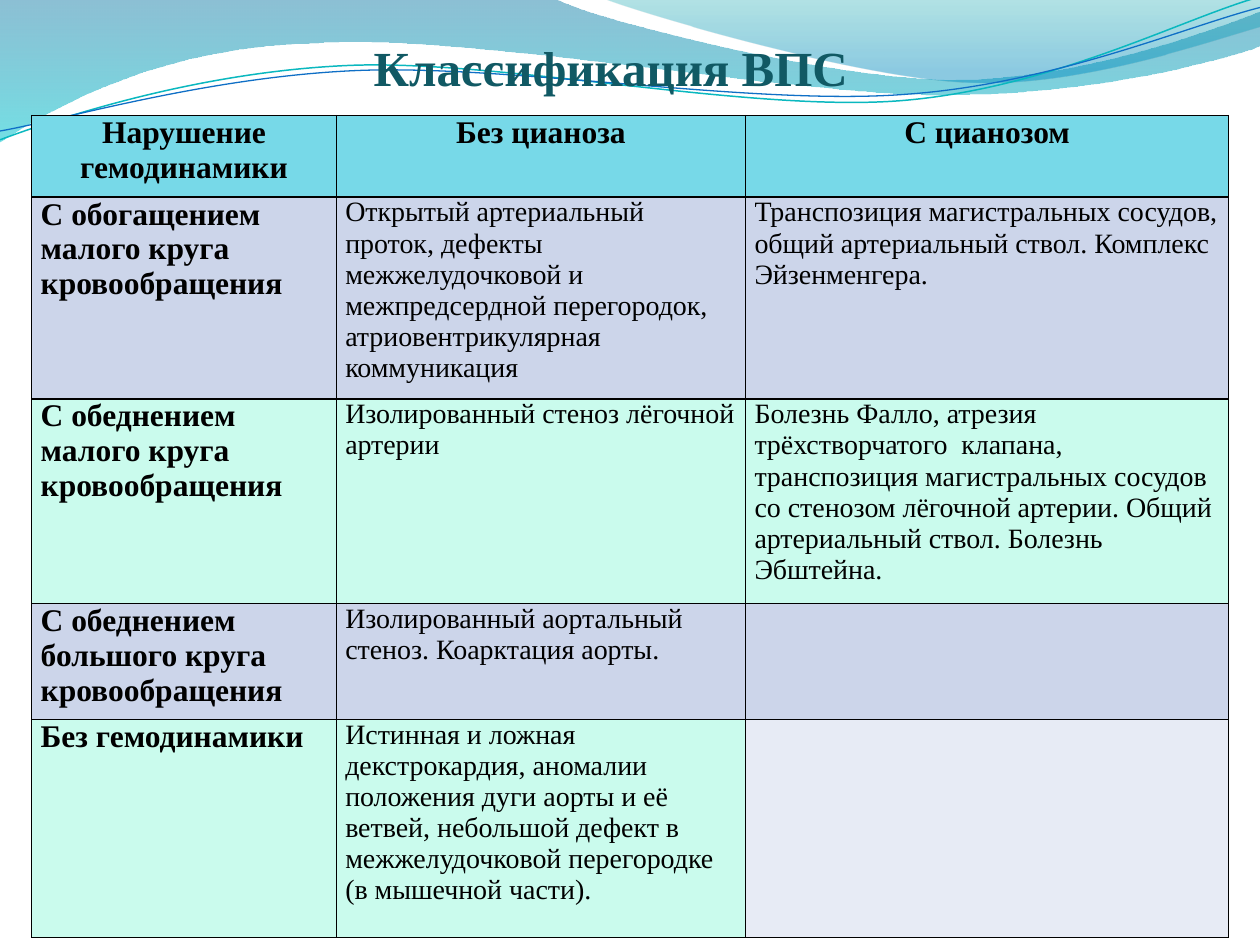
from dataclasses import dataclass
from math import cos, radians, sin

from lxml.etree import SubElement
from pptx import Presentation
from pptx.dml.color import RGBColor as Color
from pptx.enum.text import PP_ALIGN as Align
from pptx.oxml.ns import qn
from pptx.util import Cm, Pt


@dataclass(frozen=True)
class Theme:
    """Colours, fonts and type sizes of the slide."""
    font: str = "Times New Roman"
    spacer_font: str = "Cambria"
    title_size: int = 28
    label_size: int = 18
    body_size: int = 16
    title: str = "115964"
    ink: str = "000000"
    header: str = "77D9E8"
    blue: str = "CCD5EA"
    mint: str = "CAFBED"
    pale: str = "E7EBF5"
    teal_line: str = "0AB8BF"
    blue_line: str = "0F6FC6"
    left_wave: tuple = ((0, "0074A1", 45), (100, "00C6CF", 55))
    right_wave: tuple = ((0, "00A1A9", 30), (80, "008BBF", 45))


THEME = Theme()
UNITS_PER_INCH = 1000
LINE_TILT = -2.7

LEFT_WAVE = [
    (0, 0), (4.4, -0.01),
    (4.76, 0.17, 6.64, 0.63, 7.58, 0.63), (8.53, 0.63, 9.58, 0.26, 10, 0.09),
    (10.01, 0.36),
    (9.83, 0.44, 8.7, 0.76, 7.46, 0.75), (6.22, 0.75, 3.82, 0.28, 2.57, 0.34),
    (1.29, 0.36, 0.46, 0.83, -0.01, 1.13),
]
RIGHT_WAVE = [
    (4.79, -0.01),
    (5.09, 0.11, 6.82, 0.62, 7.69, 0.65), (8.56, 0.69, 9.61, 0.32, 10, 0.21),
    (10, 0),
]
TEAL_CURVE = [
    (0, 1.11), (0.48, 0.93, 1.58, 0.57, 2.77, 0.52),
    (3.95, 0.47, 5.93, 0.89, 7.13, 0.8), (8.33, 0.71, 9.38, 0.15, 9.98, -0.02),
]
BLUE_CURVE = [
    (0, 1.04), (0.47, 0.96, 1.64, 0.61, 2.83, 0.56),
    (4.03, 0.51, 5.97, 0.84, 7.17, 0.75), (8.36, 0.67, 9.41, 0.21, 10, 0.06),
]

COLUMNS = (6.14, 8.25, 9.74)
ROWS = (1.64, 4.07, 4.13, 2.33, 4.4)
CONTENT = [
    ("Нарушение гемодинамики", "Без цианоза", "С цианозом"),
    ("С обогащением малого круга кровообращения",
     "Открытый артериальный проток, дефекты межжелудочковой и межпредсердной "
     "перегородок, атриовентрикулярная коммуникация",
     "Транспозиция магистральных сосудов, общий артериальный ствол. "
     "Комплекс Эйзенменгера."),
    ("С обеднением малого круга кровообращения",
     "Изолированный стеноз лёгочной артерии",
     "Болезнь Фалло, атрезия трёхстворчатого  клапана, транспозиция "
     "магистральных сосудов со стенозом лёгочной артерии. Общий артериальный "
     "ствол. Болезнь Эбштейна."),
    ("С обеднением большого круга кровообращения",
     "Изолированный аортальный стеноз. Коарктация аорты.", ""),
    ("Без гемодинамики",
     "Истинная и ложная декстрокардия, аномалии положения дуги аорты и её "
     "ветвей, небольшой дефект в межжелудочковой перегородке "
     "(в мышечной части).", ""),
]


def turn(step, centre, degrees):
    """Turn the points of one step clockwise about a centre."""
    angle = radians(degrees)
    middle_x, middle_y = centre
    turned = []
    for x, y in zip(step[::2], step[1::2]):
        across, down = x - middle_x, y - middle_y
        turned += [middle_x + across * cos(angle) - down * sin(angle),
                   middle_y + across * sin(angle) + down * cos(angle)]
    return turned


def add_outline(page, steps, close):
    """Draw a freeform from steps in inches: points, or cubic curves of six numbers."""
    units = [(x * UNITS_PER_INCH, y * UNITS_PER_INCH)
             for step in steps for x, y in zip(step[::2], step[1::2])]
    builder = page.shapes.build_freeform(*units[0], scale=Cm(2.54) / UNITS_PER_INCH)
    builder.add_line_segments(units[1:], close=close)
    shape = builder.convert_to_shape()
    shape.shadow.inherit = False
    segments = iter(list(shape._element.iter(qn("a:lnTo"))))
    for step in steps[1:]:
        segment = next(segments)
        if len(step) == 6:
            outline = segment.getparent()
            curve = outline.makeelement(qn("a:cubicBezTo"))
            segment.addprevious(curve)
            for part in (segment, next(segments), next(segments)):
                curve.append(part[0])
                outline.remove(part)
    return shape


def add_wave(page, steps, stops):
    """Add a closed wave with a translucent vertical gradient."""
    shape = add_outline(page, steps, True)
    shape.line.fill.background()
    shape.fill.gradient()
    gradient = shape._element.spPr.find(qn("a:gradFill"))
    for child in list(gradient):
        gradient.remove(child)
    stop_list = SubElement(gradient, qn("a:gsLst"))
    for position, colour, opacity in stops:
        stop = SubElement(stop_list, qn("a:gs"), pos=str(position * 1000))
        solid = SubElement(stop, qn("a:srgbClr"), val=colour)
        SubElement(solid, qn("a:alpha"), val=str(opacity * 1000))
    SubElement(gradient, qn("a:lin"), ang="5400000", scaled="0")


def add_curve(page, steps, centre, colour, width):
    """Add a thin tilted open curve."""
    level = [turn(step, centre, -LINE_TILT) for step in steps]
    shape = add_outline(page, level, False)
    shape.rotation = LINE_TILT
    shape.fill.background()
    shape.line.color.rgb = Color.from_string(colour)
    shape.line.width = Pt(width)


def add_span(para, text, size, colour, bold=True, font=THEME.font):
    """Add one formatted run to a paragraph."""
    span = para.add_run()
    span.text = text
    span.font.name = font
    span.font.size = Pt(size)
    span.font.bold = bold
    span.font.color.rgb = Color.from_string(colour)


def add_title(page):
    """Add the centred slide title."""
    box = page.shapes.add_textbox(Cm(0.53), Cm(0.64), Cm(23.42), Cm(11.71))
    box.text_frame.word_wrap = True
    para = box.text_frame.paragraphs[0]
    para.alignment = Align.CENTER
    add_span(para, " ", THEME.label_size, THEME.ink, font=THEME.spacer_font)
    add_span(para, "Классификация ВПС", THEME.title_size, THEME.title)


def add_borders(cell):
    """Give a cell a thin line on all four sides."""
    properties = cell._tc.get_or_add_tcPr()
    for side in ("a:lnL", "a:lnR", "a:lnT", "a:lnB"):
        line = SubElement(properties, qn(side), w=str(Pt(1)))
        solid = SubElement(line, qn("a:solidFill"))
        SubElement(solid, qn("a:srgbClr"), val=THEME.ink)


def cell_colour(row, column):
    """Choose the fill for a cell by its place."""
    if row == 0:
        return THEME.header
    if row == len(ROWS) - 1 and column == len(COLUMNS) - 1:
        return THEME.pale
    return THEME.blue if row % 2 else THEME.mint


def cell_alignment(row, column):
    """Choose the alignment for a cell by its place."""
    if row == 0:
        return Align.CENTER
    return Align.JUSTIFY if (row, column) == (len(ROWS) - 1, 0) else Align.LEFT


def fill_cell(cell, text, row, column):
    """Set the fill, borders, margins and text of a cell."""
    add_borders(cell)
    cell.fill.solid()
    cell.fill.fore_color.rgb = Color.from_string(cell_colour(row, column))
    if text:
        cell.margin_left = cell.margin_right = Cm(0.18)
        cell.margin_top = cell.margin_bottom = Cm(0)
        label = row == 0 or column == 0
        para = cell.text_frame.paragraphs[0]
        para.alignment = cell_alignment(row, column)
        add_span(para, text, THEME.label_size if label else THEME.body_size,
                 THEME.ink, label)


def add_defect_table(page):
    """Add the table of heart defects."""
    table = page.shapes.add_table(len(ROWS), len(COLUMNS), Cm(0.64), Cm(2.33),
                                  Cm(sum(COLUMNS)), Cm(sum(ROWS))).table
    for column, width in zip(table.columns, COLUMNS):
        column.width = Cm(width)
    for row, height in zip(table.rows, ROWS):
        row.height = Cm(height)
    for row, texts in enumerate(CONTENT):
        for column, text in enumerate(texts):
            fill_cell(table.cell(row, column), text, row, column)


def main():
    """Build and save the deck."""
    deck = Presentation()
    deck.slide_width, deck.slide_height = Cm(25.4), Cm(19.05)
    page = deck.slides.add_slide(deck.slide_layouts[6])
    add_wave(page, LEFT_WAVE, THEME.left_wave)
    add_wave(page, RIGHT_WAVE, THEME.right_wave)
    add_curve(page, TEAL_CURVE, (4.99, 0.58), THEME.teal_line, 0.85)
    add_curve(page, BLUE_CURVE, (5, 0.59), THEME.blue_line, 0.75)
    add_title(page)
    add_defect_table(page)
    deck.save("out.pptx")


if __name__ == "__main__":
    main()
